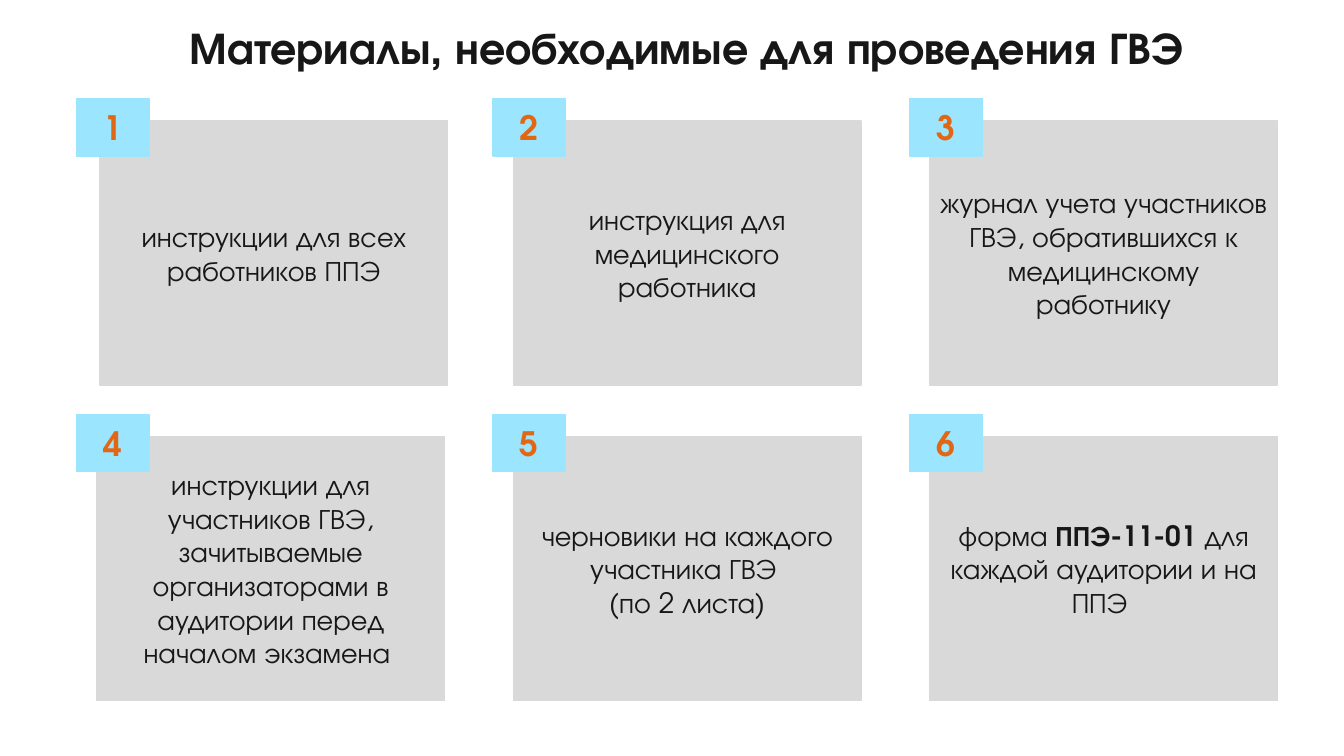
from pptx import Presentation
from pptx import util as u
from pptx.dml.color import RGBColor
from pptx.enum import shapes, text

TITLE = "Материалы, необходимые для проведения ГВЭ"
CARDS = [
    [["инструкции для всех работников ППЭ"]],
    [["инструкция для медицинского работника"]],
    [["журнал учета участников ГВЭ, обратившихся к медицинскому работнику"]],
    [["инструкции для участников ГВЭ, зачитываемые организаторами "
      "в аудитории перед началом экзамена "]],
    [["черновики на каждого участника ГВЭ "], ["(по 2 листа)"]],
    [["форма ", "ППЭ-11-01", " для каждой аудитории и на ППЭ "]],
]
BOLD = {"ППЭ-11-01"}
NUDGE = {0: 0.03}

FACE = "TeX Gyre Adventor"
INK = RGBColor(0x18, 0x17, 0x17)
GRAY = RGBColor(0xD9, 0xD9, 0xD9)
SKY = RGBColor(0x9B, 0xE5, 0xFF)
RUST = RGBColor(0xE2, 0x67, 0x14)

HEAD = {"size": u.Pt(32), "name": FACE, "bold": True}
BODY = {"size": u.Pt(20), "name": FACE, "bold": False}
MARK = {"size": u.Pt(24), "name": FACE, "bold": True}

COLS = 3
STEP_X, STEP_Y = 4.13, 3.13
CARD = (0.96, 1.2, 3.45, 2.62)
TAG = (0.76, 0.98, 0.72, 0.57)


def write(frame, paras, style, ink):
    frame.word_wrap = True
    frame.auto_size = text.MSO_AUTO_SIZE.NONE
    frame.vertical_anchor = text.MSO_ANCHOR.MIDDLE
    for i, runs in enumerate(paras):
        para = frame.paragraphs[0] if i == 0 else frame.add_paragraph()
        para.alignment = text.PP_ALIGN.CENTER
        for words in runs:
            run = para.add_run()
            run.text = words
            for key, val in style.items():
                setattr(run.font, key, val)
            if words in BOLD:
                run.font.bold = True
            run.font.color.rgb = ink


def block(slide, area, shift, fill, paras, style, ink):
    left, top, wide, high = area
    place = (left + shift[0], top + shift[1], wide, high)
    box = slide.shapes.add_shape(
        shapes.MSO_SHAPE.RECTANGLE, *(u.Inches(v) for v in place))
    box.shadow.inherit = False
    box.fill.solid()
    box.fill.fore_color.rgb = fill
    box.line.color.rgb = fill
    box.line.width = u.Pt(1)
    write(box.text_frame, paras, style, ink)


def main():
    deck = Presentation()
    deck.slide_width, deck.slide_height = u.Inches(13.33), u.Inches(7.5)
    slide = deck.slides.add_slide(deck.slide_layouts[5])

    title = slide.shapes.title
    title.left, title.top = u.Inches(1.32), u.Inches(0.14)
    title.width, title.height = u.Inches(10.98), u.Inches(0.64)
    write(title.text_frame, [[TITLE]], HEAD, INK)

    for i, paras in enumerate(CARDS):
        row, col = divmod(i, COLS)
        x, y = col * STEP_X, row * STEP_Y
        block(slide, CARD, (x + NUDGE.get(i, 0), y), GRAY, paras, BODY, INK)
        block(slide, TAG, (x, y), SKY, [[str(i + 1)]], MARK, RUST)

    deck.save("out.pptx")


if __name__ == "__main__":
    main()
